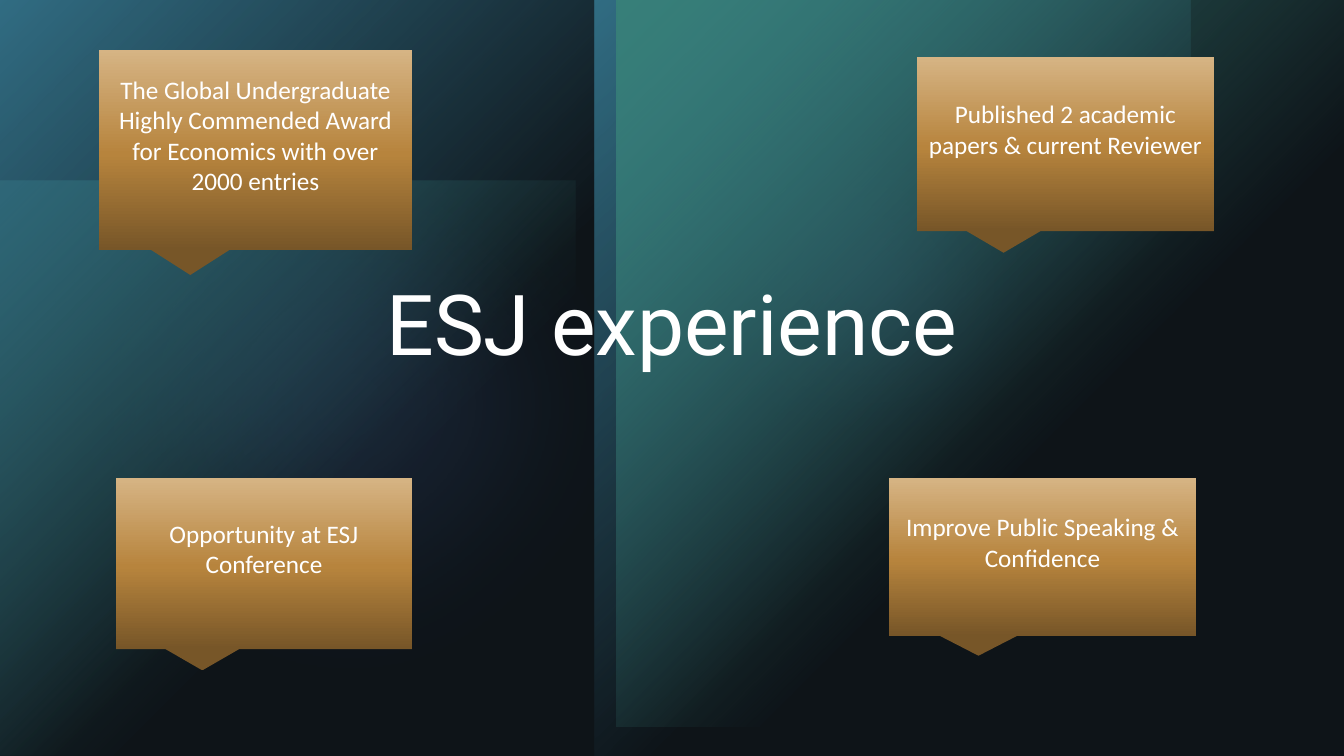
from lxml import etree
from pptx import Presentation
from pptx import util as u
from pptx.dml.color import RGBColor
from pptx.enum import shapes, text
from pptx.oxml.ns import qn

# Content: left, top, width, height in px
TITLE = "ESJ experience"
TITLE_BOX = (60, 278, 1224, 200)
CALLOUTS = [
    ("The Global Undergraduate Highly Commended Award for Economics with over 2000 entries",
     (99, 50, 313, 200)),
    ("Published 2 academic papers & current Reviewer", (917, 57, 297, 174)),
    ("Opportunity at ESJ Conference", (116, 478, 296, 171)),
    ("Improve Public Speaking & Confidence", (889, 478, 307, 158)),
]

# Stops: position %, colour, opacity %
GOLD = [(0, "775628", 100), (48, "B7843D", 100), (100, "D6B484", 100)]
RECT, OVAL = shapes.MSO_SHAPE.RECTANGLE, shapes.MSO_SHAPE.OVAL
# Backdrop, back to front: shape, box, colour, opacity %, fades out
BACKDROP = [
    (RECT, (0, 181, 576, 575), "46B4A1", 60, True),
    (OVAL, (634, 43, 476, 476), "4D74C3", 60, False),
    (OVAL, (0, 56, 700, 700), "4D74C3", 20, False),
    (RECT, (0, 0, 595, 756), "3B94B1", 100, True),
    (RECT, (595, 0, 596, 756), "3B94B1", 100, True),
    (RECT, (617, 0, 727, 727), "46B4A1", 100, True),
    (RECT, (0, 0, 1344, 756), "23323E", 40, False),
]
SLIDE_W, SLIDE_H = 1344, 756
FADE_END = 60
SOFT_EDGE = 140
LINE_HEIGHT = 30
INSET_X, INSET_Y = 10, 5


def px(n):
    return u.Emu(round(n * 914400 / 100.8))


def rgb(value):
    return RGBColor.from_string(value)


def add_colour(parent, colour, opacity):
    node = etree.SubElement(parent, qn("a:srgbClr"), val=colour)
    if opacity < 100:
        etree.SubElement(node, qn("a:alpha"), val=str(opacity * 1000))


def paint(shape, stops, angle=0):
    """Fill with one colour, or with a linear gradient when there are more stops."""
    shape.fill.background()
    empty = shape._element.spPr.find(qn("a:noFill"))
    if len(stops) == 1:
        fill = etree.Element(qn("a:solidFill"))
        add_colour(fill, *stops[0][1:])
    else:
        fill = etree.Element(qn("a:gradFill"), rotWithShape="1")
        stop_list = etree.SubElement(fill, qn("a:gsLst"))
        for position, colour, opacity in stops:
            stop = etree.SubElement(stop_list, qn("a:gs"), pos=str(position * 1000))
            add_colour(stop, colour, opacity)
        etree.SubElement(fill, qn("a:lin"), ang=str(angle * 60000), scaled="0")
    empty.getparent().replace(empty, fill)


def add_block(slide, kind, box, stops, angle=0):
    block = slide.shapes.add_shape(kind, *map(px, box))
    paint(block, stops, angle)
    block.line.fill.background()
    block.shadow.inherit = False
    return block


def write(shape, words, *, font, size, anchor, spacing=1.0, bottom=INSET_Y):
    frame = shape.text_frame
    frame.word_wrap = True
    frame.auto_size = text.MSO_AUTO_SIZE.NONE
    frame.vertical_anchor = anchor
    frame.margin_left = frame.margin_right = px(INSET_X)
    frame.margin_top, frame.margin_bottom = px(INSET_Y), px(bottom)
    frame.text = words
    paragraph = frame.paragraphs[0]
    paragraph.alignment = text.PP_ALIGN.CENTER
    paragraph.line_spacing = spacing
    style = paragraph.runs[0].font
    style.name, style.size, style.color.rgb = font, u.Pt(size), rgb("FFFFFF")


def main():
    prs = Presentation()
    prs.slide_width, prs.slide_height = px(SLIDE_W), px(SLIDE_H)
    slide = prs.slides.add_slide(prs.slide_layouts[5])
    slide.background.fill.solid()
    slide.background.fill.fore_color.rgb = rgb("000000")

    # Backdrop of fading panels and soft glows
    for kind, box, colour, opacity, fades in BACKDROP:
        stops = [(0, colour, opacity)]
        if fades:
            stops += [(FADE_END, colour, 0), (100, colour, 0)]
        panel = add_block(slide, kind, box, stops, 45)
        if kind == OVAL:
            effects = panel._element.spPr.find(qn("a:effectLst"))
            etree.SubElement(effects, qn("a:softEdge"), rad=str(px(SOFT_EDGE)))

    # Title, brought in front of the backdrop
    title = slide.shapes.title
    title.left, title.top, title.width, title.height = map(px, TITLE_BOX)
    write(title, TITLE, font="Roboto", size=60, spacing=0.9, anchor=text.MSO_ANCHOR.TOP)
    slide.shapes._spTree.append(title._element)

    # Callouts, their text raised by half a line
    for words, box in CALLOUTS:
        callout = add_block(slide, shapes.MSO_SHAPE.RECTANGULAR_CALLOUT, box, GOLD, 270)
        write(callout, words, font="Calibri", size=18, anchor=text.MSO_ANCHOR.MIDDLE,
              bottom=INSET_Y + LINE_HEIGHT)

    prs.save("out.pptx")


if __name__ == "__main__":
    main()
